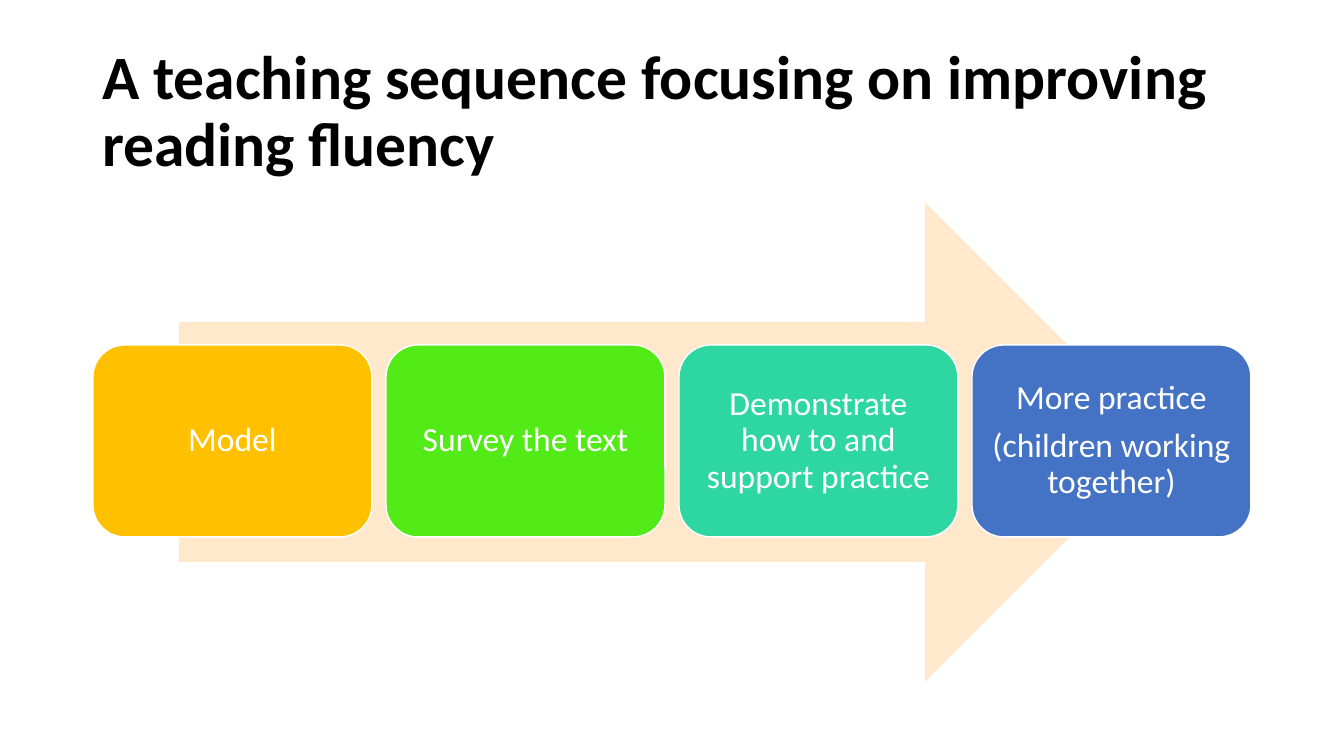
from pptx import Presentation
from pptx.dml.color import RGBColor
from pptx.enum.shapes import MSO_SHAPE
from pptx.enum.text import MSO_ANCHOR, MSO_AUTO_SIZE, PP_ALIGN
from pptx.util import Pt

# Content
BLACK = RGBColor(0x00, 0x00, 0x00)
WHITE = RGBColor(0xFF, 0xFF, 0xFF)
PEACH = RGBColor(0xFF, 0xE8, 0xCC)
AMBER = RGBColor(0xFF, 0xC0, 0x00)
GREEN = RGBColor(0x53, 0xEB, 0x17)
TEAL = RGBColor(0x2E, 0xD7, 0xA1)
BLUE = RGBColor(0x44, 0x72, 0xC4)

FONT = "Calibri"
TITLE = "A teaching sequence focusing on improving reading fluency"
STEPS = [
    (AMBER, ["Model"]),
    (GREEN, ["Survey the text"]),
    (TEAL, ["Demonstrate how to and support practice"]),
    (BLUE, ["More practice", "(children working together)"]),
]

# Layout in px
SLIDE_WIDTH, SLIDE_HEIGHT = 1344, 756
TITLE_BOX = (92, 40, 1159, 146)
ARROW_BOX = (179, 202, 986, 480)
STEP_LEFT, STEP_TOP, STEP_WIDTH, STEP_HEIGHT = 93, 345, 279, 192
STEP_GAP = 14
STEP_INSET = 10


def px(length):
    return round(length * 914400 / 100.8)


def add_block(page, kind, box, fill):
    block = page.shapes.add_shape(kind, *map(px, box))
    block.shadow.inherit = False
    block.fill.solid()
    block.fill.fore_color.rgb = fill
    block.line.fill.background()
    return block


def format_paragraph(para, size, color, bold, align):
    para.alignment = align
    para.line_spacing = 0.9
    for span in para.runs:
        span.font.name = FONT
        span.font.size = Pt(size)
        span.font.bold = bold
        span.font.color.rgb = color


def add_step(page, index, fill, lines):
    left = STEP_LEFT + index * (STEP_WIDTH + STEP_GAP)
    step = add_block(page, MSO_SHAPE.ROUNDED_RECTANGLE,
                     (left, STEP_TOP, STEP_WIDTH, STEP_HEIGHT), fill)
    step.line.color.rgb = WHITE
    step.line.width = Pt(1)
    frame = step.text_frame
    frame.word_wrap = True
    frame.vertical_anchor = MSO_ANCHOR.MIDDLE
    frame.margin_left = frame.margin_right = px(STEP_INSET)
    frame.margin_top = frame.margin_bottom = px(STEP_INSET)
    frame.text = "\n".join(lines)
    for para in frame.paragraphs:
        format_paragraph(para, 24, WHITE, False, PP_ALIGN.CENTER)
    for para in frame.paragraphs[:-1]:
        para.space_after = Pt(8)


def main():
    deck = Presentation()
    deck.slide_width, deck.slide_height = px(SLIDE_WIDTH), px(SLIDE_HEIGHT)
    page = deck.slides.add_slide(deck.slide_layouts[5])

    # Title
    title = page.shapes.title
    title.left, title.top, title.width, title.height = map(px, TITLE_BOX)
    frame = title.text_frame
    frame.text = TITLE
    frame.word_wrap = True
    frame.auto_size = MSO_AUTO_SIZE.NONE
    frame.vertical_anchor = MSO_ANCHOR.MIDDLE
    format_paragraph(frame.paragraphs[0], 44, BLACK, True, PP_ALIGN.LEFT)

    # Arrow behind the steps
    add_block(page, MSO_SHAPE.RIGHT_ARROW, ARROW_BOX, PEACH)

    # Steps
    for index, (fill, lines) in enumerate(STEPS):
        add_step(page, index, fill, lines)

    deck.save("out.pptx")


if __name__ == "__main__":
    main()
